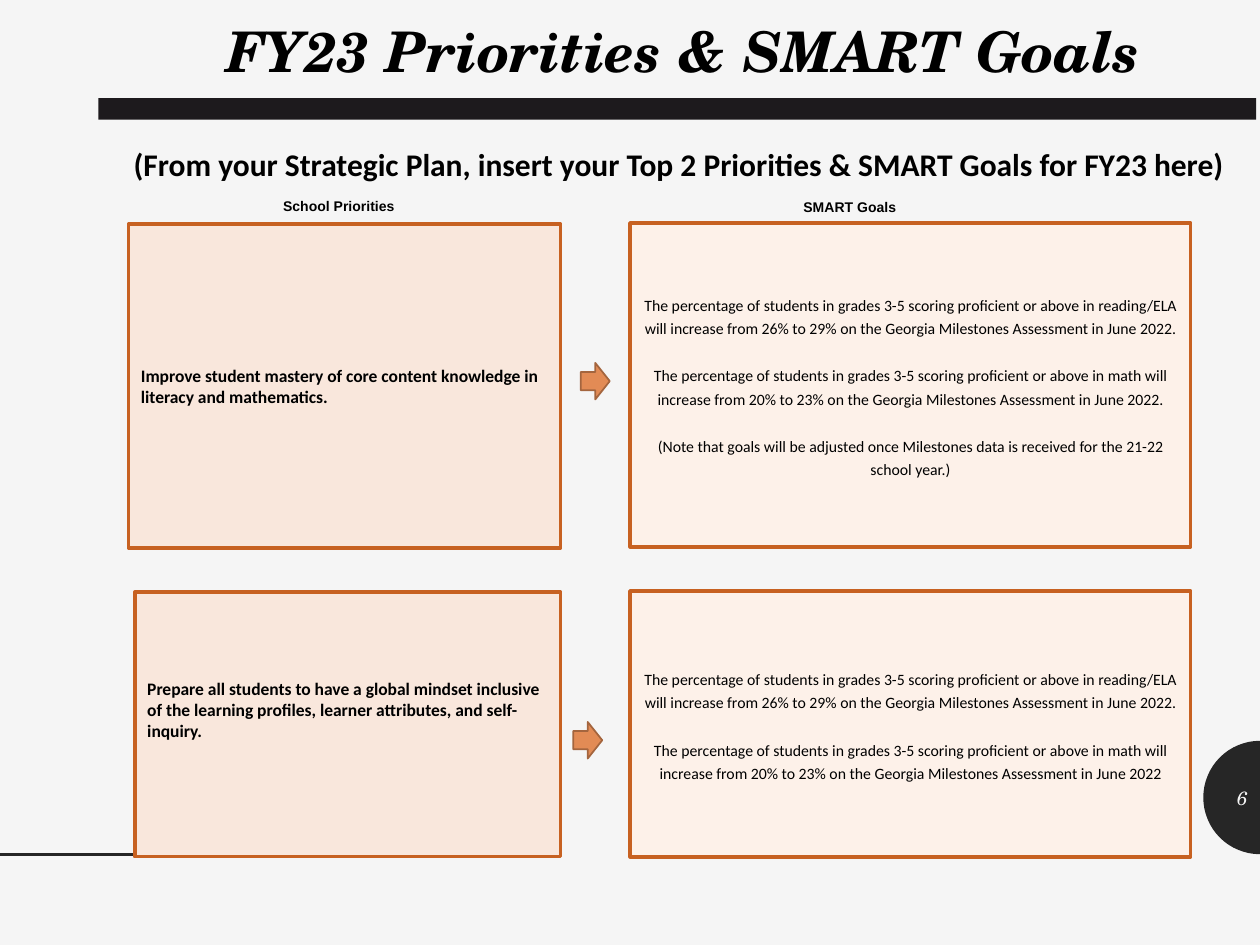
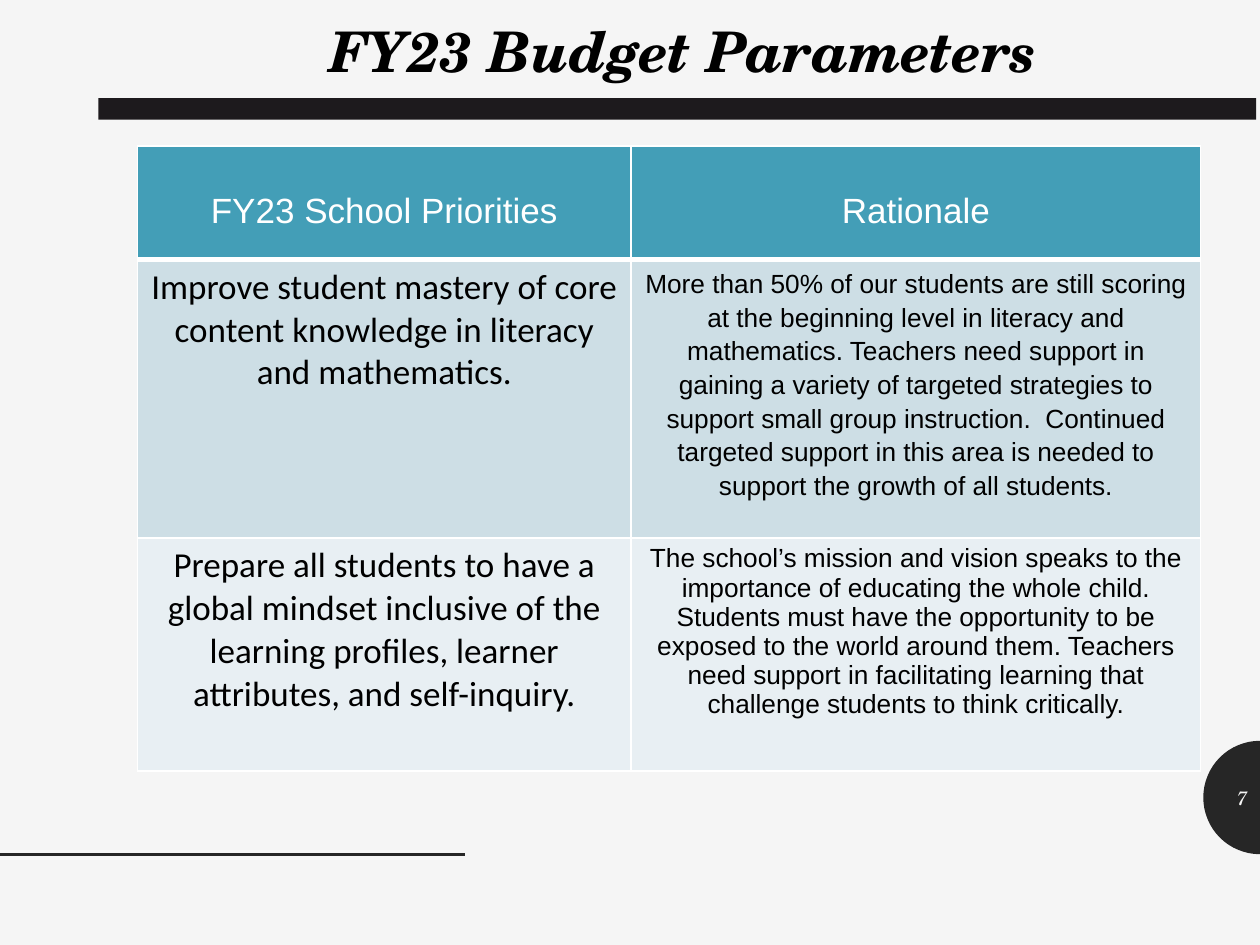
from math import cos, pi, sin

from pptx import Presentation
from pptx.dml.color import RGBColor
from pptx.enum.shapes import MSO_CONNECTOR, MSO_SHAPE
from pptx.enum.text import MSO_ANCHOR, PP_ALIGN
from pptx.oxml.ns import qn
from pptx.util import Inches, Pt
from lxml import etree

PAPER = RGBColor(0xF5, 0xF5, 0xF5)
DARK = RGBColor(0x26, 0x26, 0x26)
BAND = RGBColor(0x1D, 0x1A, 0x1D)
BLACK = RGBColor(0, 0, 0)
WHITE = RGBColor(0xFF, 0xFF, 0xFF)
PEACH = RGBColor(0xF9, 0xE7, 0xDC)
CREAM = RGBColor(0xFD, 0xF1, 0xE9)
RUST = RGBColor(0xC7, 0x61, 0x21)
ORANGE = RGBColor(0xE2, 0x8B, 0x55)
BROWN = RGBColor(0xA4, 0x65, 0x3E)
TEAL = RGBColor(0x43, 0x9E, 0xB7)
MIST = RGBColor(0xCD, 0xDE, 0xE5)
PALE = RGBColor(0xE8, 0xEF, 0xF3)

SERIF = "TeX Gyre Schola"
TITLE = {"name": SERIF, "size": Pt(32), "bold": True, "italic": True}
NUMBER = {"name": SERIF, "size": Pt(11), "italic": True}
LEAD = {"name": "Calibri", "size": Pt(18), "bold": True}
LABEL = {"name": "Arial", "size": Pt(8), "bold": True}
FOCUS = {"name": "Calibri", "size": Pt(10), "bold": True}
GOAL = {"name": "Calibri", "size": Pt(9), "bold": False}
HEAD = {"name": "Arial", "size": Pt(20), "bold": False}
TOPIC = {"name": "Calibri", "size": Pt(20), "bold": False}
REASON = {"name": "Arial", "size": Pt(15), "bold": False}

CENTER = {"alignment": PP_ALIGN.CENTER}
LEFT = {"alignment": PP_ALIGN.LEFT}
RIGHT = {"alignment": PP_ALIGN.RIGHT}
LOOSE = {"alignment": PP_ALIGN.CENTER, "line_spacing": 1.24}
ROOMY = {"alignment": PP_ALIGN.CENTER, "line_spacing": 1.15}

LITERACY = "Improve student mastery of core content knowledge in literacy and mathematics."
MINDSET = ("Prepare all students to have a global mindset inclusive of the learning "
           "profiles, learner attributes, and self-inquiry.")
TARGET = ("The percentage of students in grades 3-5 scoring proficient or above in {} "
          "will increase from {} on the Georgia Milestones Assessment in June 2022")
READING = TARGET.format("reading/ELA", "26% to 29%") + "."
MATH = TARGET.format("math", "20% to 23%")
NOTE = ("(Note that goals will be adjusted once Milestones data is received for the "
        "21-22 school year.)")
GROWTH = ("More than 50% of our students are still scoring at the beginning level in "
          "literacy and mathematics. Teachers need support in gaining a variety of "
          "targeted strategies to support small group instruction.  Continued targeted "
          "support in this area is needed to support the growth of all students.")
WHOLE = ("The school’s mission and vision speaks to the importance of educating the "
         "whole child. Students must have the opportunity to be exposed to the world "
         "around them. Teachers need support in facilitating learning that challenge "
         "students to think critically.")


def inch(*nums):
    return [Inches(n) for n in nums]


def apply(item, values):
    for name, value in values.items():
        setattr(item, name, value)


def write(frame, lines, font, para=CENTER, color=BLACK, gap=0):
    """Fill a text frame, one paragraph a line, with gap points between them."""
    frame.word_wrap = True
    for i, line in enumerate(lines):
        item = frame.paragraphs[0] if i == 0 else frame.add_paragraph()
        apply(item, para)
        if i:
            item.space_before = Pt(gap)
        run = item.add_run()
        run.text = line
        apply(run.font, font)
        run.font.color.rgb = color


def paint(shape, fill, line=None, width=1):
    shape.shadow.inherit = False
    shape.fill.solid()
    shape.fill.fore_color.rgb = fill
    if line is None:
        shape.line.fill.background()
    else:
        shape.line.color.rgb = line
        shape.line.width = Pt(width)


def add_text(slide, spot, line, font, para=CENTER, color=BLACK,
             anchor=MSO_ANCHOR.TOP):
    frame = slide.shapes.add_textbox(*inch(*spot)).text_frame
    frame.vertical_anchor = anchor
    write(frame, [line], font, para, color)


def add_box(slide, spot, fill, lines, font, para, gap=0, foot=0.05):
    """Add a framed box; foot is its bottom inset."""
    box = slide.shapes.add_shape(MSO_SHAPE.RECTANGLE, *inch(*spot))
    paint(box, fill, RUST, 2)
    frame = box.text_frame
    frame.vertical_anchor = MSO_ANCHOR.MIDDLE
    frame.margin_bottom = Inches(foot)
    write(frame, lines, font, para, gap=gap)


def add_arrow(slide, left, top):
    arrow = slide.shapes.add_shape(MSO_SHAPE.RIGHT_ARROW,
                                   *inch(left, top, 0.23, 0.29))
    paint(arrow, ORANGE, BROWN)


def add_disc(slide):
    """Add the half disc at the right edge."""
    turns = [pi / 2 + pi * i / 32 for i in range(33)]
    dots = [inch(10 + 0.45 * cos(t), 6.33 + 0.45 * sin(t)) for t in turns]
    path = slide.shapes.build_freeform(*dots[0])
    path.add_line_segments(dots[1:], close=True)
    paint(path.convert_to_shape(), DARK)


def add_rule(slide):
    rule = slide.shapes.add_connector(MSO_CONNECTOR.STRAIGHT,
                                      *inch(0, 6.78, 3.69, 6.78))
    rule.line.color.rgb = DARK
    rule.line.width = Pt(2)
    etree.SubElement(rule._element.spPr, qn("a:effectLst"))


def add_slide(deck, title, number):
    """Add a slide with the shared title, band, rule and number."""
    slide = deck.slides.add_slide(deck.slide_layouts[5])
    slide.background.fill.solid()
    slide.background.fill.fore_color.rgb = PAPER
    add_disc(slide)
    add_rule(slide)
    band = slide.shapes.add_shape(MSO_SHAPE.RECTANGLE,
                                  *inch(0.78, 0.78, 9.19, 0.17))
    paint(band, BAND)
    head = slide.shapes.title
    spot = inch(0.96, 0.08, 8.93, 0.64)
    apply(head, dict(zip(("left", "top", "width", "height"), spot)))
    head.text_frame.vertical_anchor = MSO_ANCHOR.TOP
    write(head.text_frame, [title], TITLE)
    add_text(slide, (9.55, 6.13, 0.45, 0.4), str(number), NUMBER, RIGHT, PAPER,
             MSO_ANCHOR.MIDDLE)
    return slide


def edge(cell, foot):
    """Draw white borders round a cell; foot is the bottom width in points."""
    props = cell._tc.get_or_add_tcPr()
    for i, side in enumerate(("lnL", "lnR", "lnT", "lnB")):
        width = foot if side == "lnB" else 1
        line = etree.Element(qn("a:" + side), w=str(Pt(width)))
        fill = etree.SubElement(line, qn("a:solidFill"))
        etree.SubElement(fill, qn("a:srgbClr"), val=str(WHITE))
        props.insert(i, line)


def add_grid(slide, rows, wide, tall):
    """Add a table; each row is a fill, a text colour, a top inset and its cells."""
    grid = slide.shapes.add_table(len(rows), len(wide), *inch(
        1.09, 1.16, sum(wide), sum(tall))).table
    for col, width in zip(grid.columns, wide):
        col.width = Inches(width)
    for r, (fill, color, inset, cells) in enumerate(rows):
        grid.rows[r].height = Inches(tall[r])
        for c, (line, font, para) in enumerate(cells):
            cell = grid.cell(r, c)
            cell.fill.solid()
            cell.fill.fore_color.rgb = fill
            cell.margin_top = Inches(inset)
            edge(cell, 1 if r else 3)
            write(cell.text_frame, [line], font, para, color)


def add_goals(deck):
    slide = add_slide(deck, "FY23 Priorities & SMART Goals", 6)
    add_text(slide, (0.78, 1.1, 9.22, 0.71),
             "(From your Strategic Plan, insert your Top 2 Priorities & SMART Goals "
             "for FY23 here)", LEAD)
    add_text(slide, (2.04, 1.52, 1.3, 0.24), "School Priorities", LABEL)
    add_text(slide, (6.1, 1.53, 1.29, 0.24), "SMART Goals", LABEL)
    add_box(slide, (1.02, 1.78, 3.43, 2.57), PEACH, [LITERACY], FOCUS, LEFT)
    add_box(slide, (1.07, 4.7, 3.38, 2.1), PEACH, [MINDSET], FOCUS, LEFT, foot=0.29)
    goals = (1.77, 2.57, [READING, MATH + ".", NOTE]), (4.69, 2.11, [READING, MATH])
    for top, height, lines in goals:
        add_box(slide, (5, top, 4.45, height), CREAM, lines, GOAL, LOOSE, gap=13.5)
    add_arrow(slide, 4.61, 2.88)
    add_arrow(slide, 4.55, 5.73)


def add_budget(deck):
    slide = add_slide(deck, "FY23 Budget Parameters", 7)
    rows = [
        (TEAL, WHITE, 0.36, [("FY23 School Priorities", HEAD, CENTER),
                             ("Rationale", HEAD, CENTER)]),
        (MIST, BLACK, 0.05, [(LITERACY, TOPIC, CENTER), (GROWTH, REASON, ROOMY)]),
        (PALE, BLACK, 0.05, [(MINDSET, TOPIC, CENTER), (WHOLE, REASON, CENTER)]),
    ]
    add_grid(slide, rows, (3.92, 4.52), (0.9, 2.21, 1.85))


def main():
    deck = Presentation()
    deck.slide_width, deck.slide_height = inch(10, 7.5)
    add_goals(deck)
    add_budget(deck)
    deck.save("out.pptx")


if __name__ == "__main__":
    main()
